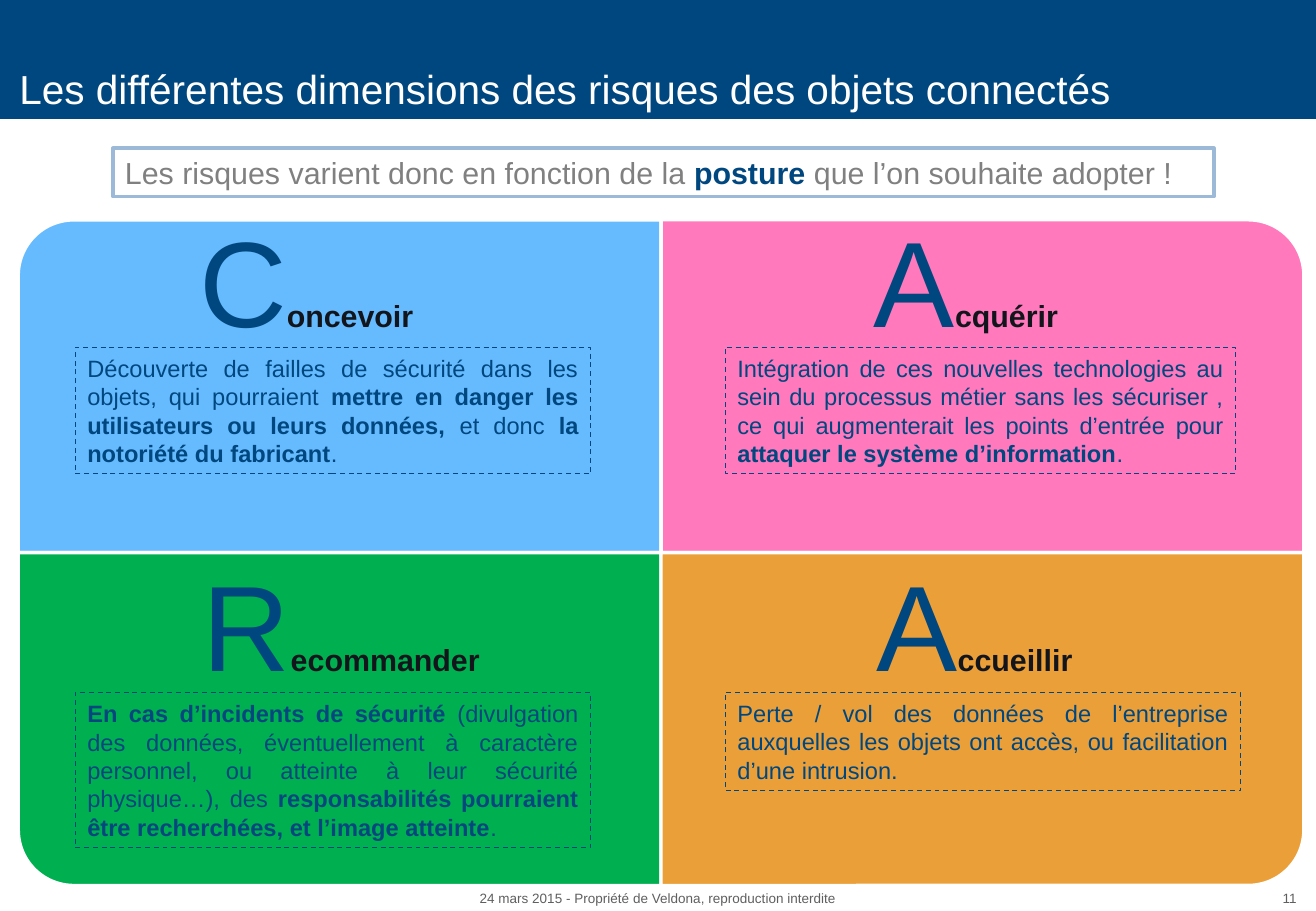
"""Build the slide on the four risk postures for connected objects."""
import pptx
import pptx.util
import pptx.dml.color
import pptx.enum.dml
import pptx.enum.shapes
import pptx.enum.text

Inches = pptx.util.Inches
Pt = pptx.util.Pt
RGBColor = pptx.dml.color.RGBColor
Shape = pptx.enum.shapes.MSO_SHAPE
Align = pptx.enum.text.PP_ALIGN
Anchor = pptx.enum.text.MSO_ANCHOR

NAVY = RGBColor(0x00, 0x47, 0x7F)
WHITE = RGBColor(0xFF, 0xFF, 0xFF)
GREY = RGBColor(0x80, 0x80, 0x80)
SMOKE = RGBColor(0x5F, 0x5F, 0x5F)
INK = RGBColor(0x12, 0x15, 0x1B)
STEEL = RGBColor(0x9C, 0xB9, 0xD8)
BLUE = RGBColor(0x66, 0xBB, 0xFF)
PINK = RGBColor(0xFF, 0x79, 0xBC)
GREEN = RGBColor(0x00, 0xB0, 0x50)
AMBER = RGBColor(0xEB, 0x9F, 0x39)

WIDE, HIGH = 10.83, 7.5
LEFT, TOP = 0.15, 1.81
COL, ROW = 5.29, 2.74


def write(frame, align, runs):
    """Fill a frame with runs of (text, size, colour, bold)."""
    frame.word_wrap = True
    para = frame.paragraphs[0]
    para.alignment = align
    for text, size, color, bold in runs:
        run = para.add_run()
        run.text = text
        run.font.name = "Arial"
        run.font.size = Pt(size)
        run.font.color.rgb = color
        run.font.bold = bold


def draw(kind, box, fill, line, width):
    """Add a flat shape and return it."""
    shape = slide.shapes.add_shape(kind, *map(Inches, box))
    shape.shadow.inherit = False
    if fill is None:
        shape.fill.background()
    else:
        shape.fill.solid()
        shape.fill.fore_color.rgb = fill
    shape.line.color.rgb = line
    shape.line.width = Pt(width)
    return shape


deck = pptx.Presentation()
deck.slide_width, deck.slide_height = Inches(WIDE), Inches(HIGH)
slide = deck.slides.add_slide(deck.slide_layouts[5])

title = slide.shapes.title
title.left, title.top = 0, 0
title.width, title.height = Inches(WIDE), Inches(0.98)
title.fill.solid()
title.fill.fore_color.rgb = NAVY
frame = title.text_frame
frame.auto_size = pptx.enum.text.MSO_AUTO_SIZE.NONE
frame.vertical_anchor = Anchor.BOTTOM
frame.margin_left = Inches(0.16)
write(frame, Align.LEFT, [
    ("Les différentes dimensions des risques des objets connectés", 24, WHITE, False)])

banner = draw(Shape.RECTANGLE, (0.93, 1.22, 9.06, 0.4), WHITE, STEEL, 2)
write(banner.text_frame, Align.LEFT, [
    ("Les risques varient donc en fonction de la ", 18, GREY, False),
    ("posture ", 18, NAVY, True),
    ("que l’on souhaite adopter !", 18, GREY, False)])

cards = [
    (0, 0, BLUE, 270, "C", "oncevoir", 2.52, 4.24, 1.04, [
        ("Découverte de failles de sécurité dans les objets, qui pourraient ", False),
        ("mettre en danger les utilisateurs ou leurs données, ", True),
        ("et donc ", False),
        ("la notoriété du fabricant", True),
        (".", False)]),
    (1, 0, PINK, 0, "A", "cquérir", 7.95, 4.2, 1.04, [
        ("Intégration de ces nouvelles technologies au sein du processus métier "
         "sans les sécuriser , ce qui augmenterait les points d’entrée pour ", False),
        ("attaquer le système d’information", True),
        (".", False)]),
    (0, 1, GREEN, 180, "R", "ecommander", 2.81, 4.24, 1.28, [
        ("En cas d’incidents de sécurité ", True),
        ("(divulgation des données, éventuellement à caractère personnel, "
         "ou atteinte à leur sécurité physique…), des ", False),
        ("responsabilités pourraient être recherchées, et l’image atteinte", True),
        (".", False)]),
    (1, 1, AMBER, 90, "A", "ccueillir", 8.02, 4.24, 0.81, [
        ("Perte / vol des données de l’entreprise auxquelles les objets ont accès, "
         "ou facilitation d’une intrusion.", False)]),
]

for col, row, color, turn, first, rest, mid, width, height, parts in cards:
    wide, high = (ROW, COL) if turn % 180 else (COL, ROW)
    left = LEFT + (col + 0.5) * COL - wide / 2
    top = TOP + (row + 0.5) * ROW - high / 2
    tile = draw(Shape.ROUND_1_RECTANGLE, (left, top, wide, high), color, WHITE, 2)
    tile.rotation = turn

    box = (0.62 + col * 5.35, 2.86 + row * 2.84, width, height)
    note = draw(Shape.RECTANGLE, box, None, NAVY, 0.75)
    note.line.dash_style = pptx.enum.dml.MSO_LINE.DASH
    write(note.text_frame, Align.JUSTIFY,
          [(text, 14, NAVY, bold) for text, bold in parts])

    head = slide.shapes.add_textbox(
        Inches(mid - 1.25), Inches(1.65 + row * 2.83), Inches(2.5), Inches(1.31))
    write(head.text_frame, Align.CENTER,
          [(first, 72, NAVY, False), (rest, 18, INK, True)])
    head.text_frame.word_wrap = False

feet = [
    (0, WIDE, Align.CENTER, "24 mars 2015 - Propriété de Veldona, reproduction interdite"),
    (10.14, 0.63, Align.RIGHT, "11"),
]
for left, width, align, text in feet:
    foot = slide.shapes.add_textbox(
        Inches(left), Inches(7.29), Inches(width), Inches(0.21))
    foot.text_frame.vertical_anchor = Anchor.MIDDLE
    write(foot.text_frame, align, [(text, 8, SMOKE, False)])

deck.save("out.pptx")
